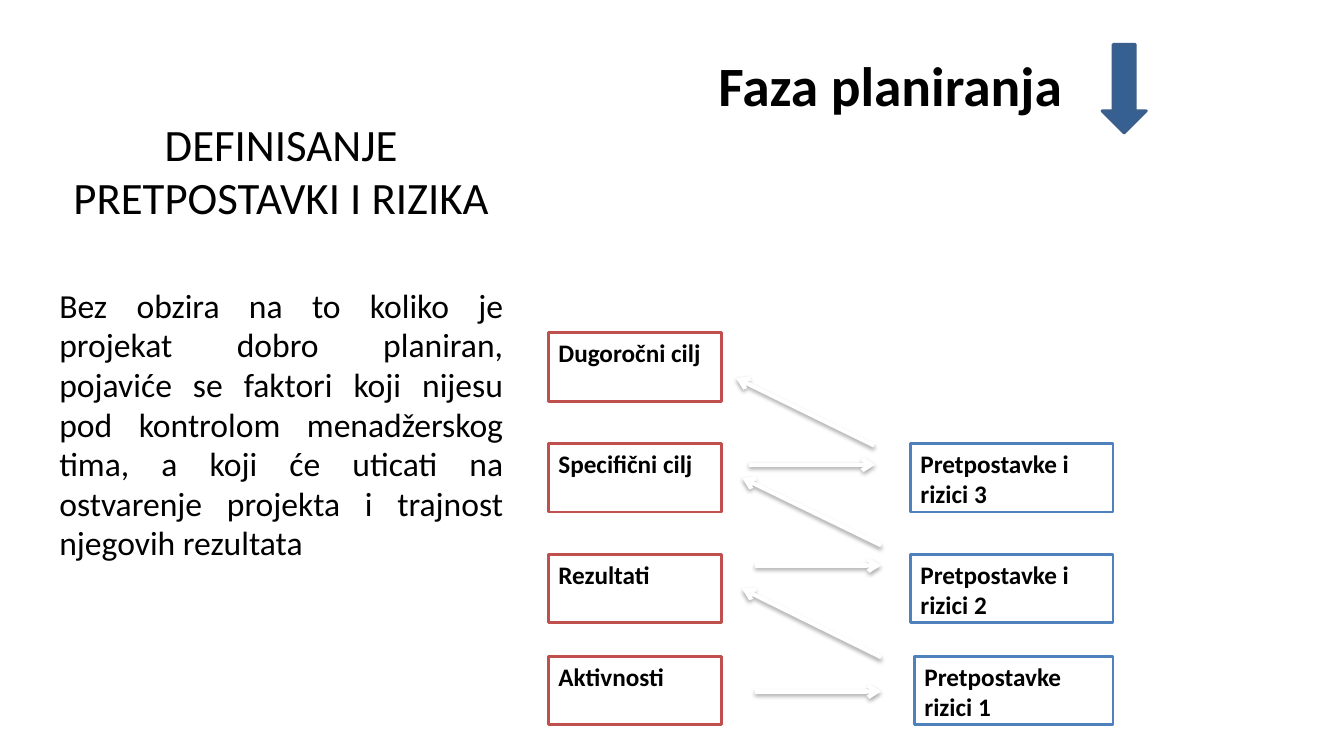
"""Build the planning-phase slide on defining assumptions and risks."""
from lxml import etree
from pptx import Presentation
from pptx import util as u
from pptx.dml.color import RGBColor
from pptx.enum import shapes, text
from pptx.oxml import parse_xml
from pptx.oxml.ns import nsdecls, qn

COLORS = {"black": "000000", "white": "FFFFFF", "red": "C0504D",
          "blue": "4F81BD", "arrow": "376092", "arrow_line": "3A5F8C"}
RGB = {name: RGBColor.from_string(value) for name, value in COLORS.items()}
SHADOW = (f'<a:effectLst {nsdecls("a")}><a:outerShdw blurRad="40000" dist="23000" '
          'dir="5400000" rotWithShape="0"><a:srgbClr val="000000">'
          '<a:alpha val="35000"/></a:srgbClr></a:outerShdw></a:effectLst>')


def add_text(p, words, size, bold=False):
    r = p.add_run()
    r.text = words
    r.font.color.rgb = RGB["black"]
    for name, value in {"name": "Calibri", "size": u.Pt(size), "bold": bold}.items():
        setattr(r.font, name, value)


def add_shape(kind, box, fill, line):
    sp = s.shapes.add_shape(kind, *map(u.Inches, box))
    sp.shadow.inherit = False
    sp.fill.solid()
    sp.fill.fore_color.rgb = RGB[fill]
    sp.line.color.rgb = RGB[line]
    sp.line.width = u.Pt(2)
    return sp


prs = Presentation()
prs.slide_width, prs.slide_height = u.Inches(13.33), u.Inches(7.5)
s = prs.slides.add_slide(prs.slide_layouts[6])

tf = s.shapes.add_textbox(*map(u.Inches, (6.83, 0.4, 4, 0.88))).text_frame
tf.word_wrap = True
tf.vertical_anchor = text.MSO_ANCHOR.MIDDLE
tf.paragraphs[0].alignment = text.PP_ALIGN.CENTER
add_text(tf.paragraphs[0], "Faza planiranja", 39.6, True)

tf = s.shapes.add_textbox(*map(u.Inches, (0.49, 1.14, 4.6, 6.36))).text_frame
tf.word_wrap = True
heading, body = tf.paragraphs[0], tf.add_paragraph()
heading.alignment = text.PP_ALIGN.CENTER
add_text(heading, "DEFINISANJE PRETPOSTAVKI I RIZIKA", 32)
body.alignment = text.PP_ALIGN.JUSTIFY
body.space_before = u.Pt(44)
add_text(body, "Bez obzira na to koliko je projekat dobro planiran, pojaviće se faktori "
         "koji nijesu pod kontrolom menadžerskog tima, a koji će uticati na "
         "ostvarenje projekta i trajnost njegovih rezultata", 24)
for p in tf.paragraphs:
    p.line_spacing = 0.98

goals = ["Dugoročni cilj", "Specifični cilj", "Rezultati", "Aktivnosti"]
risks = ["Pretpostavke i rizici 3", "Pretpostavke i rizici 2", "Pretpostavke rizici 1"]
tops = [3.3, 4.4, 5.5, 6.51]
boxes = [(words, 5.44, top, 1.72, "red") for words, top in zip(goals, tops)]
boxes += [(words, left, top, 11.04 - left, "blue")
          for words, left, top in zip(risks, (9.03, 9.03, 9.07), tops[1:])]
for words, left, top, width, line in boxes:
    sp = add_shape(shapes.MSO_SHAPE.RECTANGLE, (left, top, width, 0.68), "white", line)
    tf = sp.text_frame
    tf.vertical_anchor = text.MSO_ANCHOR.TOP
    tf.paragraphs[0].alignment = text.PP_ALIGN.LEFT
    add_text(tf.paragraphs[0], words, 18, True)

arrows = [(8.67, 4.42, 7.3, 3.75), (8.74, 5.41, 7.36, 4.74), (8.74, 6.52, 7.36, 5.84)]
arrows += [(left, y, left + 1.25, y)
           for left, y in ((7.43, 4.61), (7.49, 5.61), (7.49, 6.86))]
for ends in arrows:
    c = s.shapes.add_connector(shapes.MSO_CONNECTOR.STRAIGHT, *map(u.Inches, ends))
    c.line.color.rgb = RGB["white"]
    c.line.width = u.Pt(3)
    etree.SubElement(c.line._get_or_add_ln(), qn("a:tailEnd"), type="arrow")
    c._element.spPr.append(parse_xml(SHADOW))

add_shape(shapes.MSO_SHAPE.DOWN_ARROW, (10.93, 0.44, 0.44, 0.88), "arrow", "arrow_line")

prs.save("out.pptx")
